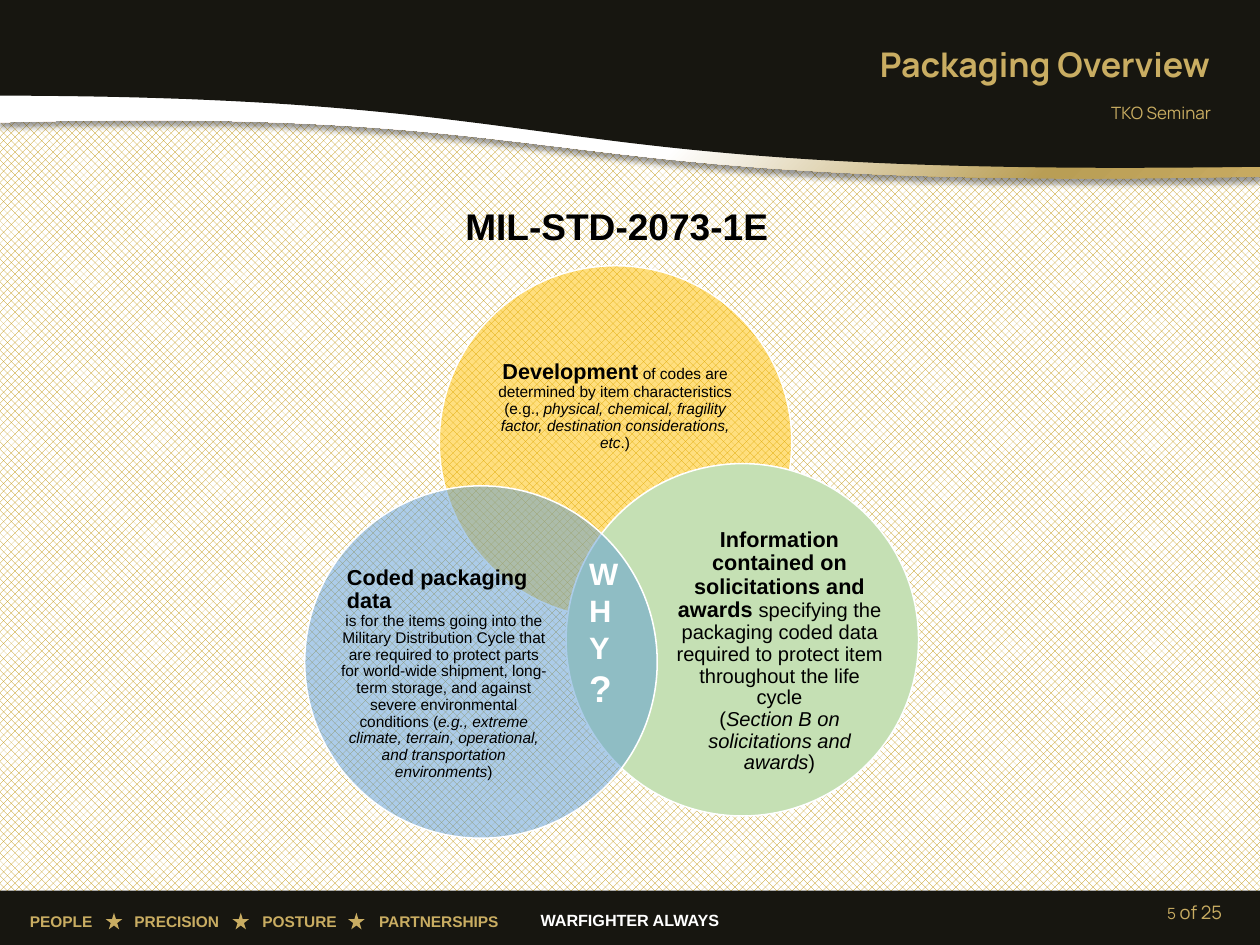
from copy import deepcopy

from lxml.etree import SubElement, fromstring
from pptx import Presentation
from pptx.dml.color import RGBColor
from pptx.enum.dml import MSO_PATTERN
from pptx.enum.shapes import MSO_SHAPE as Shape
from pptx.enum.text import MSO_ANCHOR as Anchor, MSO_AUTO_SIZE as AutoSize, PP_ALIGN as Align
from pptx.oxml.ns import nsdecls, qn
from pptx.util import Inches, Pt

BLACK = RGBColor(0x00, 0x00, 0x00)
WHITE = RGBColor(0xFF, 0xFF, 0xFF)
INK = RGBColor(0x17, 0x16, 0x10)
GOLD = RGBColor(0xC9, 0xAD, 0x62)
HATCH = RGBColor(0xBF, 0x90, 0x00)
AMBER = RGBColor(0xFF, 0xC0, 0x00)
GREEN = RGBColor(0xC5, 0xE0, 0xB4)
BLUE = RGBColor(0x5B, 0x9B, 0xD5)

SWOOSH_GRADIENT = f"""<a:gradFill {nsdecls('a')} rotWithShape="1"><a:gsLst>
<a:gs pos="55000"><a:srgbClr val="FFFFFF"/></a:gs>
<a:gs pos="84000"><a:srgbClr val="B99E55"/></a:gs>
<a:gs pos="100000"><a:srgbClr val="C7AA61"/></a:gs></a:gsLst>
<a:path path="circle"><a:fillToRect r="100000" b="100000"/></a:path></a:gradFill>"""
SWOOSH_SHADOW = f"""<a:outerShdw {nsdecls('a')} blurRad="50800" dist="38100" dir="5400000"
algn="t" rotWithShape="0"><a:srgbClr val="000000"><a:alpha val="40000"/></a:srgbClr></a:outerShdw>"""


def add_text(paragraph, text, size=10, color=BLACK, font="Arial", bold=False, italic=False):
    for index, line in enumerate(text.split("\n")):
        if index:
            paragraph.add_line_break()
            paragraph._p[-1].append(deepcopy(run._r.rPr))
        run = paragraph.add_run()
        run.text = line
        run.font.size, run.font.name = Pt(size), font
        run.font.bold, run.font.italic = bold, italic
        run.font.color.rgb = color


def curve_points(start, first, second, end, steps=60):
    for step in range(1, steps + 1):
        t = step / steps
        weights = ((1 - t) ** 3, 3 * t * (1 - t) ** 2, 3 * t * t * (1 - t), t ** 3)
        yield tuple(Inches(sum(w * p[axis] for w, p in zip(weights, (start, first, second, end))))
                    for axis in (0, 1))


class SlideBuilder:
    """Hold the current slide and draw its styled elements."""

    def __init__(self, slide):
        self.slide = slide
        self.shapes = slide.shapes

    def background(self):
        fill = self.slide.background.fill
        fill.patterned()
        fill.pattern = MSO_PATTERN.PERCENT_50
        fill.fore_color.rgb, fill.back_color.rgb = HATCH, WHITE

    def paint(self, shape, color, opacity=100, outline=None):
        shape.shadow.inherit = False
        shape.fill.solid()
        shape.fill.fore_color.rgb = color
        if opacity < 100:
            tint = shape.element.spPr.find(".//" + qn("a:srgbClr"))
            SubElement(tint, qn("a:alpha")).set("val", str(opacity * 1000))
        if outline is None:
            shape.line.fill.background()
        else:
            shape.line.color.rgb, shape.line.width = outline, Pt(1)
        return shape

    def preset(self, kind, left, top, width, height, color, **style):
        box = (Inches(value) for value in (left, top, width, height))
        return self.paint(self.shapes.add_shape(kind, *box), color, **style)

    def banner(self, left, top, *curve):
        right = 11.33
        builder = self.shapes.build_freeform(Inches(right), Inches(top))
        corners = [(Inches(left), Inches(y)) for y in (top, curve[0][1])]
        builder.add_line_segments(corners + list(curve_points(*curve)), close=True)
        return self.paint(builder.convert_to_shape(), INK)

    def swoosh(self, *banner):
        shape = self.banner(*banner)
        properties = shape.element.spPr
        solid = properties.find(qn("a:solidFill"))
        properties.replace(solid, fromstring(SWOOSH_GRADIENT))
        properties.find(qn("a:effectLst")).append(fromstring(SWOOSH_SHADOW))

    def text(self, left, top, width, height, *paragraphs, align=Align.LEFT, anchor=Anchor.TOP,
             inset=None, spacing=None, wrap=True, tabs=()):
        box = self.shapes.add_textbox(*(Inches(value) for value in (left, top, width, height)))
        frame = box.text_frame
        frame.word_wrap, frame.vertical_anchor, frame.auto_size = wrap, anchor, AutoSize.NONE
        if inset is not None:
            frame.margin_left = frame.margin_right = Inches(inset)
            frame.margin_top = frame.margin_bottom = Inches(inset)
        for index, runs in enumerate(paragraphs):
            paragraph = frame.add_paragraph() if index else frame.paragraphs[0]
            if tabs:
                tab_list = SubElement(paragraph._p.get_or_add_pPr(), qn("a:tabLst"))
                for stop in tabs:
                    tab = SubElement(tab_list, qn("a:tab"))
                    tab.set("pos", str(Inches(stop)))
                    tab.set("algn", "l")
            paragraph.alignment, paragraph.line_spacing = align, spacing
            for text, style in runs:
                add_text(paragraph, text, **style)
        return frame

    def placeholder(self, shape, left, top, width, height, text, anchor, spacing=None, **style):
        shape.left, shape.top = Inches(left), Inches(top)
        shape.width, shape.height = Inches(width), Inches(height)
        shape.element.getparent().append(shape.element)
        frame = shape.text_frame
        frame.vertical_anchor, frame.auto_size = anchor, AutoSize.NONE
        paragraph = frame.paragraphs[0]
        properties = paragraph._p.get_or_add_pPr()
        properties.set("marL", "0")
        properties.set("indent", "0")
        SubElement(properties, qn("a:buNone"))
        paragraph.alignment, paragraph.line_spacing = Align.RIGHT, spacing
        paragraph.space_before = Pt(0)
        add_text(paragraph, text, color=GOLD, font="Manrope", **style)

    def circle(self, left, top, color, opacity, text_box, *paragraphs):
        self.preset(Shape.OVAL, left, top, 3.17, 3.17, color, opacity=opacity, outline=WHITE)
        return self.text(*text_box, *paragraphs, align=Align.CENTER, anchor=Anchor.MIDDLE,
                         inset=0, spacing=0.9)


def main():
    presentation = Presentation()
    presentation.slide_width, presentation.slide_height = Inches(11.33), Inches(8.5)
    slide = presentation.slides.add_slide(presentation.slide_layouts[1])
    builder = SlideBuilder(slide)
    builder.background()

    builder.swoosh(0, 0.59, (0, 1.1), (5.49, 0.95), (4.54, 1.72), (11.33, 1.59))
    builder.banner(-0.01, -0.01, (-0.01, 0.86), (5.46, 0.87), (4.52, 1.6), (11.33, 1.5))
    builder.preset(Shape.RECTANGLE, 0, 8.01, 11.35, 0.52, INK)

    builder.text(4.47, 8.14, 2.39, 0.28,
                 [("WARFIGHTER ALWAYS", dict(size=10.5, color=WHITE, bold=True))],
                 align=Align.CENTER)
    values = ("PEOPLE", "PRECISION", "POSTURE", "PARTNERSHIPS")
    builder.text(0.17, 8.15, 4.61, 0.28, [("\t".join(values), dict(color=GOLD, bold=True))],
                 tabs=(0.94, 2.09, 3.14))
    for left in (0.95, 2.09, 3.13):
        builder.preset(Shape.STAR_5_POINT, left, 8.21, 0.15, 0.15, GOLD)

    builder.placeholder(slide.placeholders[1], 6.35, 0.89, 4.64, 0.47, "TKO Seminar",
                        Anchor.TOP, spacing=0.9, size=11)
    builder.placeholder(slide.shapes.title, 2.66, 0.34, 8.32, 0.47, "Packaging Overview",
                        Anchor.MIDDLE, size=22, bold=True)
    page = dict(color=GOLD, font="Manrope")
    builder.text(7.73, 7.98, 3.36, 0.45, [("5", page), (" of 25", dict(page, size=12))],
                 align=Align.RIGHT, anchor=Anchor.MIDDLE)

    heading = dict(size=14, bold=True)
    plain, example = dict(size=10), dict(size=10, italic=True)
    builder.circle(
        3.95, 2.39, AMBER, 50, (4.37, 2.94, 2.32, 1.43),
        [("Development", heading),
         (" of codes are determined by item characteristics (e.g., ", plain),
         ("physical, chemical, fragility factor, destination considerations, etc", example),
         (".)", plain)])
    builder.circle(
        5.09, 4.17, GREEN, 100, (6.06, 4.99, 1.9, 1.74),
        [("Information contained on solicitations and awards ", heading),
         ("specifying the packaging coded data required to protect item "
          "throughout the life\ncycle\n(", dict(size=13)),
         ("Section B on solicitations and awards", dict(size=13, italic=True)),
         (")", dict(size=13))])
    coded = builder.circle(
        2.74, 4.37, BLUE, 50, (3.04, 5.19, 1.9, 1.74),
        [("Coded packaging data", heading)],
        [("is for the items going into the Military Distribution Cycle that are required to "
          "protect parts for world-wide shipment, long-term storage, and against severe "
          "environmental conditions (", plain),
         ("e.g., extreme climate, terrain, operational, and transportation environments", example),
         (")", plain)])
    coded_heading = coded.paragraphs[0]
    coded_heading.alignment = Align.LEFT
    coded_heading._p.get_or_add_pPr().set("marL", str(Inches(0.08)))

    builder.text(5.2, 4.94, 0.49, 1.51,
                 [("WHY", dict(size=20, color=WHITE, bold=True)),
                  ("?", dict(size=24, color=WHITE, bold=True))])
    builder.text(4.07, 1.78, 2.95, 0.5, [("MIL-STD-2073-1E", dict(size=24, bold=True))],
                 align=Align.CENTER, wrap=False)
    presentation.save("out.pptx")


if __name__ == "__main__":
    main()
